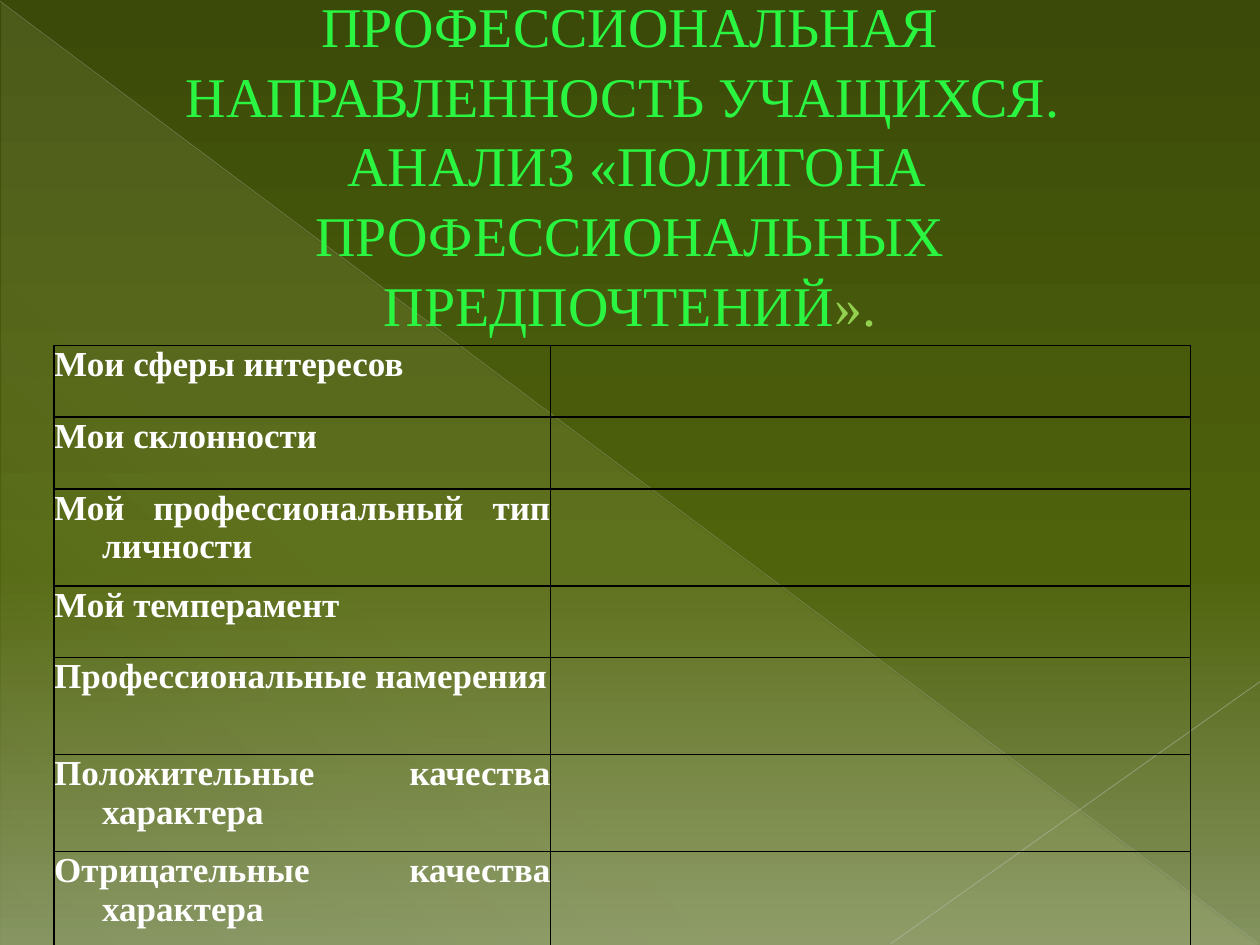
from lxml.etree import SubElement
from pptx import Presentation
from pptx.dml.color import RGBColor
from pptx.enum.shapes import MSO_CONNECTOR, MSO_SHAPE
from pptx.enum.text import MSO_ANCHOR, PP_ALIGN
from pptx.oxml.ns import qn
from pptx.util import Inches, Pt

THEME = {
    "font": "Times New Roman",
    "title_size": 32,
    "row_size": 20,
    "title": "2AF642",
    "title_end": "92D050",
    "row": "FFFFFF",
    "border": "000000",
    "backdrop": [(0, "3B4A09", 100), (60, "4F630C", 100), (100, "849360", 100)],
    "glow": [(0, "FEFAC9", 10), (70, "FEFAC9", 8), (100, "FEFAC9", 1)],
}
TITLE = [
    ("ПРОФЕССИОНАЛЬНАЯ НАПРАВЛЕННОСТЬ УЧАЩИХСЯ. \v АНАЛИЗ «ПОЛИГОНА ПРОФЕССИОНАЛЬНЫХ ПРЕДПОЧТЕНИЙ", "title"),
    ("».", "title_end"),
]
ROWS = [
    ("Мои сферы интересов", 0.57),
    ("Мои склонности", 0.57),
    ("Мой профессиональный тип личности", 0.77),
    ("Мой темперамент", 0.57),
    ("Профессиональные намерения", 0.77),
    ("Положительные качества характера", 0.77),
    ("Отрицательные качества характера", 0.77),
]
COLUMNS = [3.94, 5.08]
DIAGONALS = [
    ((0, 0.01, 9.99, 7.49), "BABDB3", 0.39, 35),
    ((10, 5.41, 7.07, 7.49), "C1C4BC", 0.47, 45),
]


def add_color(parent, color, opacity=100):
    srgb = SubElement(parent, qn("a:srgbClr"), val=color)
    if opacity < 100:
        SubElement(srgb, qn("a:alpha"), val=str(opacity * 1000))


def set_gradient(fill, owner, stops, angle):
    fill.gradient()
    fill.gradient_angle = 360 - angle
    stop_list = next(owner.iter(qn("a:gsLst")))
    for old_stop in list(stop_list):
        stop_list.remove(old_stop)
    for position, color, opacity in stops:
        stop = SubElement(stop_list, qn("a:gs"), pos=str(position * 1000))
        add_color(stop, color, opacity)


def add_backdrop(slide):
    set_gradient(slide.background.fill, slide.element, THEME["backdrop"], 90)
    glow = slide.shapes.add_shape(
        MSO_SHAPE.RIGHT_TRIANGLE, *map(Inches, (0.01, 0.02, 9.98, 7.48)))
    glow.shadow.inherit = False
    glow.line.fill.background()
    set_gradient(glow.fill, glow.element, THEME["glow"], 133)
    for ends, color, width, opacity in DIAGONALS:
        diagonal = slide.shapes.add_connector(MSO_CONNECTOR.STRAIGHT, *map(Inches, ends))
        diagonal.line.width = Pt(width)
        diagonal.line.color.rgb = RGBColor.from_string(color)
        srgb = next(diagonal.element.spPr.iter(qn("a:srgbClr")))
        SubElement(srgb, qn("a:alpha"), val=str(opacity * 1000))
        SubElement(diagonal.element.spPr, qn("a:effectLst"))


def add_title(slide):
    title = slide.shapes.add_textbox(*map(Inches, (0.75, 0.67, 8.5, 1.25))).text_frame
    title.word_wrap = True
    title.vertical_anchor = MSO_ANCHOR.MIDDLE
    heading = title.paragraphs[0]
    heading.alignment = PP_ALIGN.CENTER
    heading.line_spacing = 1.04
    heading.font.name = THEME["font"]
    heading.font.size = Pt(THEME["title_size"])
    for text, color in TITLE:
        for index, part in enumerate(text.split("\v")):
            if index:
                heading.add_line_break()
            run = heading.add_run()
            run.text = part
            run.font.name = THEME["font"]
            run.font.size = Pt(THEME["title_size"])
            run.font.color.rgb = RGBColor.from_string(THEME[color])


def style_cell(cell):
    cell.margin_left = cell.margin_right = cell.margin_top = cell.margin_bottom = 0
    properties = cell._tc.get_or_add_tcPr()
    for side in ("a:lnL", "a:lnR", "a:lnT", "a:lnB"):
        border = SubElement(properties, qn(side), w=str(Pt(1)))
        add_color(SubElement(border, qn("a:solidFill")), THEME["border"])
    cell.fill.background()


def add_profile(slide):
    heights = [height for _, height in ROWS]
    profile = slide.shapes.add_table(
        len(ROWS), len(COLUMNS),
        *map(Inches, (0.43, 2.74, sum(COLUMNS), sum(heights)))).table
    profile.first_row = profile.horz_banding = False
    for column, width in zip(profile.columns, COLUMNS):
        column.width = Inches(width)
    for row, (label, height) in zip(profile.rows, ROWS):
        row.height = Inches(height)
        for cell in row.cells:
            style_cell(cell)
        row.cells[0].text = label
        line = row.cells[0].text_frame.paragraphs[0]
        line.alignment = PP_ALIGN.JUSTIFY
        line.font.name = THEME["font"]
        line.font.size = Pt(THEME["row_size"])
        line.font.bold = True
        line.font.color.rgb = RGBColor.from_string(THEME["row"])
        indents = line._p.get_or_add_pPr()
        indents.set("marL", str(Inches(0.38)))
        indents.set("indent", str(Inches(-0.38)))


def main():
    """Build the slide on the professional orientation of students."""
    presentation = Presentation()
    presentation.slide_width = Inches(10)
    presentation.slide_height = Inches(7.5)
    slide = presentation.slides.add_slide(presentation.slide_layouts[6])
    add_backdrop(slide)
    add_title(slide)
    add_profile(slide)
    presentation.save("out.pptx")


if __name__ == "__main__":
    main()
